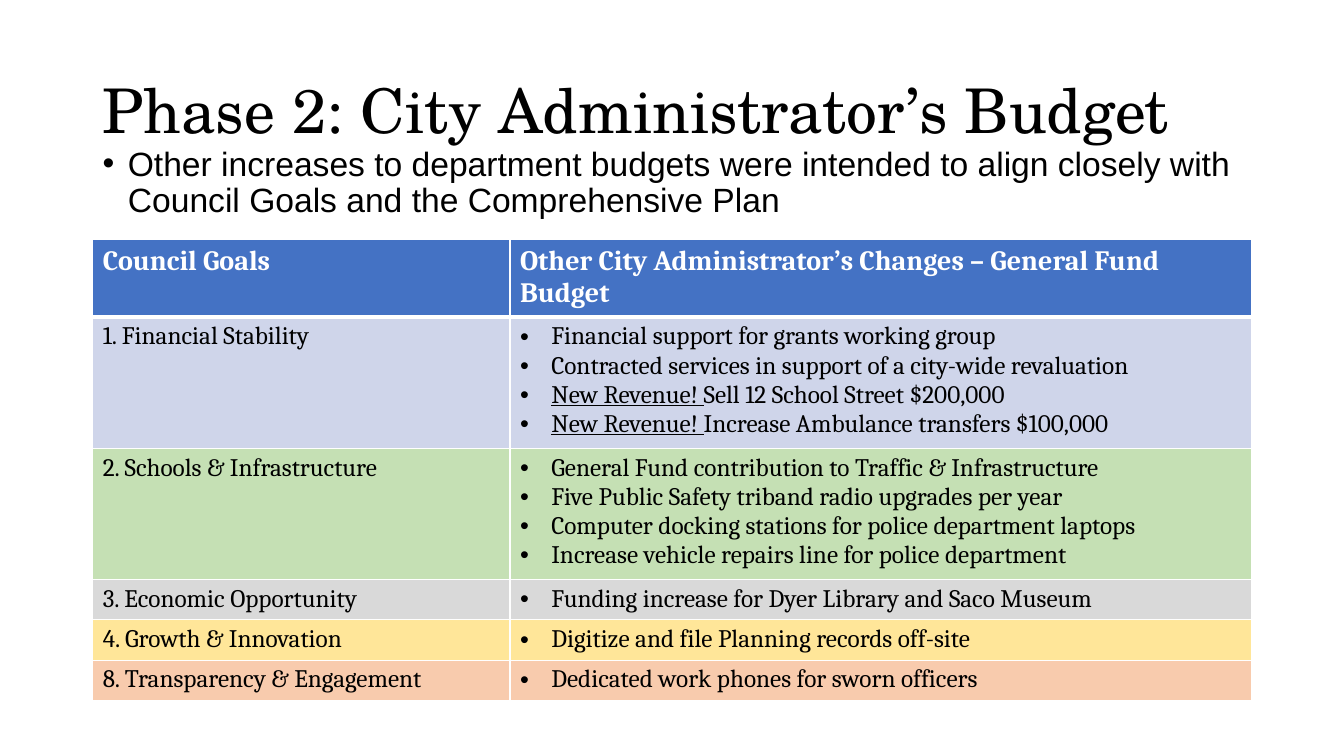
from dataclasses import dataclass

from lxml import etree
from pptx import Presentation
from pptx.dml.color import RGBColor
from pptx.enum.text import MSO_ANCHOR
from pptx.oxml.ns import qn
from pptx.util import Inches, Pt

MIDDLE = MSO_ANCHOR.MIDDLE
SLIDE_WIDTH, SLIDE_HEIGHT = Inches(13.33), Inches(7.5)


@dataclass(frozen=True)
class Theme:
    """Colours, fonts and type sizes of the slide."""
    ink: str = "000000"
    paper: str = "FFFFFF"
    header: str = "4472C4"
    title_font: str = "TeX Gyre Schola"
    intro_font: str = "Arial"
    table_font: str = "Cambria"
    title_size: int = 44
    intro_size: int = 24
    header_size: int = 20
    goal_size: int = 18
    rule: int = 1
    header_rule: int = 3


@dataclass(frozen=True)
class Box:
    """A region in percent of the slide's width and height."""
    left: float
    top: float
    width: float
    height: float

    def emu(self):
        """Return left, top, width and height in EMU."""
        return (across(self.left), down(self.top),
                across(self.width), down(self.height))


THEME = Theme()
TITLE_BOX = Box(6.9, 5.33, 86.25, 19.33)
INTRO_BOX = Box(6.9, 18.8, 86.25, 70.93)
TABLE_BOX = Box(6.9, 31.73, 86.25, 58.87)
COLUMN_SHARES = (0.36, 0.64)
HEADER_HEIGHT = 9.87
LINE_HEIGHT = 3.84
CELL_PADDING = 1.33

TITLE = "Phase 2: City Administrator’s Budget"
INTRO = ("Other increases to department budgets were intended to align "
         "closely with Council Goals and the Comprehensive Plan")
HEADINGS = ("Council Goals",
            "Other City Administrator’s Changes – General Fund Budget")
NEW_REVENUE = "New Revenue! "
GOALS = [
    ("1. Financial Stability", "CFD5EA", [
        "Financial support for grants working group",
        "Contracted services in support of a city-wide revaluation",
        NEW_REVENUE + "Sell 12 School Street $200,000",
        NEW_REVENUE + "Increase Ambulance transfers $100,000"]),
    ("2. Schools & Infrastructure", "C5E0B4", [
        "General Fund contribution to Traffic & Infrastructure",
        "Five Public Safety triband radio upgrades per year",
        "Computer docking stations for police department laptops",
        "Increase vehicle repairs line for police department"]),
    ("3. Economic Opportunity", "D9D9D9", [
        "Funding increase for Dyer Library and Saco Museum"]),
    ("4. Growth & Innovation", "FFE699", [
        "Digitize and file Planning records off-site"]),
    ("8. Transparency & Engagement", "F8CBAD", [
        "Dedicated work phones for sworn officers"]),
]


def across(percent):
    """Convert a percentage of the slide's width to EMU."""
    return int(SLIDE_WIDTH * percent / 100)


def down(percent):
    """Convert a percentage of the slide's height to EMU."""
    return int(SLIDE_HEIGHT * percent / 100)


def add_run(paragraph, text, font, size, color, bold=False, underline=False):
    """Append one formatted run."""
    run = paragraph.add_run()
    run.text = text
    run.font.name = font
    run.font.size = Pt(size)
    run.font.bold = bold
    run.font.underline = underline
    run.font.color.rgb = RGBColor.from_string(color)


def add_bullet(paragraph, indent):
    """Give a paragraph a round bullet with a hanging indent in inches."""
    properties = paragraph._p.get_or_add_pPr()
    properties.set("marL", str(Inches(indent)))
    properties.set("indent", str(-Inches(indent)))
    etree.SubElement(properties, qn("a:buFont"), typeface="Arial")
    etree.SubElement(properties, qn("a:buChar"), char="•")


def add_text_frame(slide, box):
    """Add a wrapping text box and return its frame."""
    frame = slide.shapes.add_textbox(*box.emu()).text_frame
    frame.word_wrap = True
    frame.paragraphs[0].line_spacing = 0.9
    return frame


def add_title(slide, box):
    """Place the slide title, centred vertically in its box."""
    frame = add_text_frame(slide, box)
    frame.vertical_anchor = MIDDLE
    add_run(frame.paragraphs[0], TITLE, THEME.title_font, THEME.title_size,
            THEME.ink)


def add_intro(slide, box):
    """Place the bulleted introduction."""
    intro = add_text_frame(slide, box).paragraphs[0]
    intro.space_before = Pt(10)
    add_bullet(intro, 0.25)
    add_run(intro, INTRO, THEME.intro_font, THEME.intro_size, THEME.ink)


def style_cell(cell, fill, top, bottom):
    """Fill a cell and rule its four sides, with widths in points."""
    cell.fill.solid()
    cell.fill.fore_color.rgb = RGBColor.from_string(fill)
    properties = cell._tc.get_or_add_tcPr()
    sides = {"L": THEME.rule, "R": THEME.rule, "T": top, "B": bottom}
    for position, (side, width) in enumerate(sides.items()):
        border = etree.Element(qn(f"a:ln{side}"), w=str(Pt(width)))
        paint = etree.SubElement(border, qn("a:solidFill"))
        etree.SubElement(paint, qn("a:srgbClr"), val=THEME.paper)
        properties.insert(position, border)


def fill_changes(cell, changes):
    """List the changes as bullets, underlining the new revenue label."""
    frame = cell.text_frame
    for index, change in enumerate(changes):
        paragraph = frame.add_paragraph() if index else frame.paragraphs[0]
        add_bullet(paragraph, 0.31)
        if change.startswith(NEW_REVENUE):
            add_run(paragraph, NEW_REVENUE, THEME.table_font,
                    THEME.goal_size, THEME.ink, underline=True)
        add_run(paragraph, change.removeprefix(NEW_REVENUE),
                THEME.table_font, THEME.goal_size, THEME.ink)


def add_goals_table(slide, box):
    """Place the table of council goals and budget changes."""
    table = slide.shapes.add_table(
        len(GOALS) + 1, len(HEADINGS), *box.emu()).table
    for column, share in zip(table.columns, COLUMN_SHARES):
        column.width = across(box.width * share)
    table.rows[0].height = down(HEADER_HEIGHT)
    for cell, heading in zip(table.rows[0].cells, HEADINGS):
        style_cell(cell, THEME.header, THEME.rule, THEME.header_rule)
        add_run(cell.text_frame.paragraphs[0], heading, THEME.table_font,
                THEME.header_size, THEME.paper, bold=True)
    for index, (goal, fill, changes) in enumerate(GOALS, start=1):
        row = table.rows[index]
        row.height = down(CELL_PADDING + LINE_HEIGHT * len(changes))
        top = THEME.header_rule if index == 1 else THEME.rule
        goal_cell, changes_cell = row.cells
        for cell in (goal_cell, changes_cell):
            style_cell(cell, fill, top, THEME.rule)
        add_run(goal_cell.text_frame.paragraphs[0], goal, THEME.table_font,
                THEME.goal_size, THEME.ink)
        fill_changes(changes_cell, changes)


def main():
    """Build and save the slide."""
    presentation = Presentation()
    presentation.slide_width = SLIDE_WIDTH
    presentation.slide_height = SLIDE_HEIGHT
    slide = presentation.slides.add_slide(presentation.slide_layouts[6])
    add_intro(slide, INTRO_BOX)
    add_title(slide, TITLE_BOX)
    add_goals_table(slide, TABLE_BOX)
    presentation.save("out.pptx")


if __name__ == "__main__":
    main()
